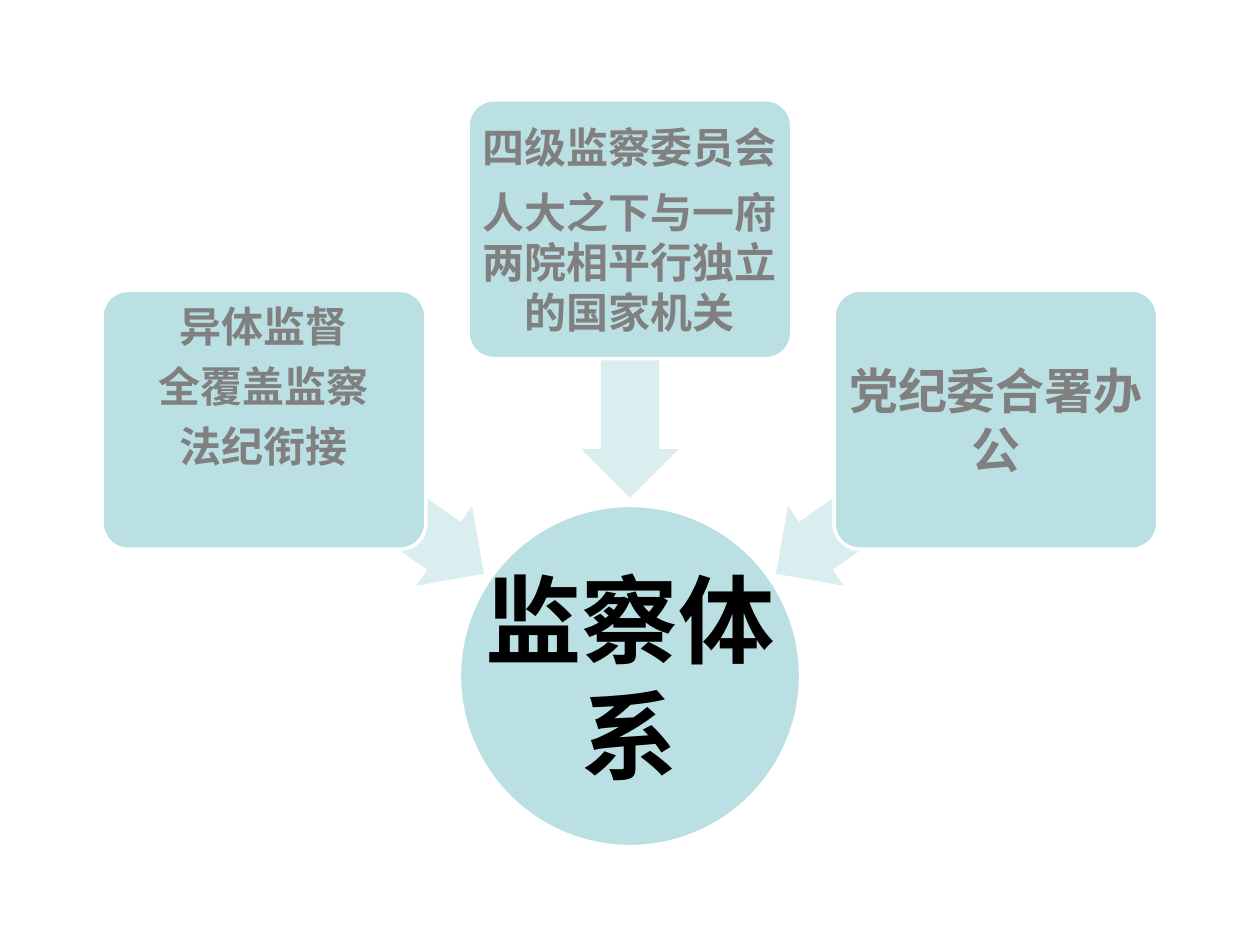
from math import cos, radians, sin

from pptx import Presentation
from pptx.dml.color import RGBColor
from pptx.enum.shapes import MSO_SHAPE
from pptx.enum.text import MSO_ANCHOR, PP_ALIGN
from pptx.util import Pt

CENTER = (360, 386.3)
CIRCLE_SIZE = (195, 195)
ARROW_SIZE, ARROW_RADIUS = (149, 55.6), 176.4
CARD_SIZE, CARD_RADIUS = (185, 148), 255.3
PALE, PALER, WHITE, GRAY, BLACK = "BBE0E3", "DAEDEF", "FFFFFF", "808080", "000000"

# Angle around the circle, size, line spacing, extra bottom inset, paragraphs
BRANCHES = [
    (215, 24, 0.9, 35, ["异体监督", "全覆盖监察", "法纪衔接"]),
    (270, 24, 1.0, 0, ["四级监察委员会", "人大之下与一府两院相平行独立的国家机关"]),
    (325, 28, 1.0, 0, ["党纪委合署办公"]),
]


def color(value):
    return RGBColor.from_string(value)


def apply_format(target, values):
    for name, value in values.items():
        setattr(target, name, value)


def box_around(center, size):
    """Left, top, width and height of a box with the given center."""
    (x, y), (width, height) = center, size
    return [Pt(v) for v in (x - width / 2, y - height / 2, width, height)]


def around_circle(angle, radius):
    turn = radians(angle)
    return CENTER[0] + radius * cos(turn), CENTER[1] + radius * sin(turn)


def add_figure(slide, preset, box, fill, adjustments=(), outline=None):
    figure = slide.shapes.add_shape(preset, *box)
    figure.shadow.inherit = False
    for index, value in enumerate(adjustments):
        figure.adjustments[index] = value
    figure.fill.solid()
    figure.fill.fore_color.rgb = color(fill)
    if outline:
        figure.line.color.rgb = color(outline)
        figure.line.width = Pt(2)
    else:
        figure.line.fill.background()
    return figure


def write(figure, paragraphs, size, ink, spacing=1.0, inset=2, extra_bottom=0):
    frame = figure.text_frame
    apply_format(frame, {
        "word_wrap": True, "vertical_anchor": MSO_ANCHOR.MIDDLE,
        "margin_left": Pt(inset), "margin_right": Pt(inset),
        "margin_top": Pt(inset), "margin_bottom": Pt(inset + extra_bottom),
    })
    for index, text in enumerate(paragraphs):
        paragraph = frame.add_paragraph() if index else frame.paragraphs[0]
        paragraph.text = text
        apply_format(paragraph, {
            "alignment": PP_ALIGN.CENTER, "line_spacing": spacing,
            "space_after": Pt(round(0.35 * size, 1)),
        })
        apply_format(paragraph.font, {"name": "Arial", "size": Pt(size), "bold": True})
        paragraph.font.color.rgb = color(ink)


def add_core(slide, box):
    add_figure(slide, MSO_SHAPE.OVAL, box, PALE, outline=WHITE)
    # The label spans the whole circle, wider than an oval's own text area
    label = slide.shapes.add_textbox(*box)
    write(label, ["监察体系"], 55, BLACK, inset=3)


def add_branch(slide, angle, size, spacing, extra_bottom, paragraphs):
    # Arrow pointing at the circle
    arrow_box = box_around(around_circle(angle, ARROW_RADIUS), ARROW_SIZE)
    arrow = add_figure(slide, MSO_SHAPE.LEFT_ARROW, arrow_box, PALER, (0.6, 0.5))
    arrow.rotation = angle
    # Card over the arrow's tail
    card_box = box_around(around_circle(angle, CARD_RADIUS), CARD_SIZE)
    card = add_figure(slide, MSO_SHAPE.ROUNDED_RECTANGLE, card_box, PALE, (0.1,), WHITE)
    write(card, paragraphs, size, GRAY, spacing, extra_bottom=extra_bottom)


def main():
    deck = Presentation()
    deck.slide_width, deck.slide_height = Pt(720), Pt(540)
    slide = deck.slides.add_slide(deck.slide_layouts[6])
    add_core(slide, box_around(CENTER, CIRCLE_SIZE))
    for branch in BRANCHES:
        add_branch(slide, *branch)
    deck.save("out.pptx")


if __name__ == "__main__":
    main()
